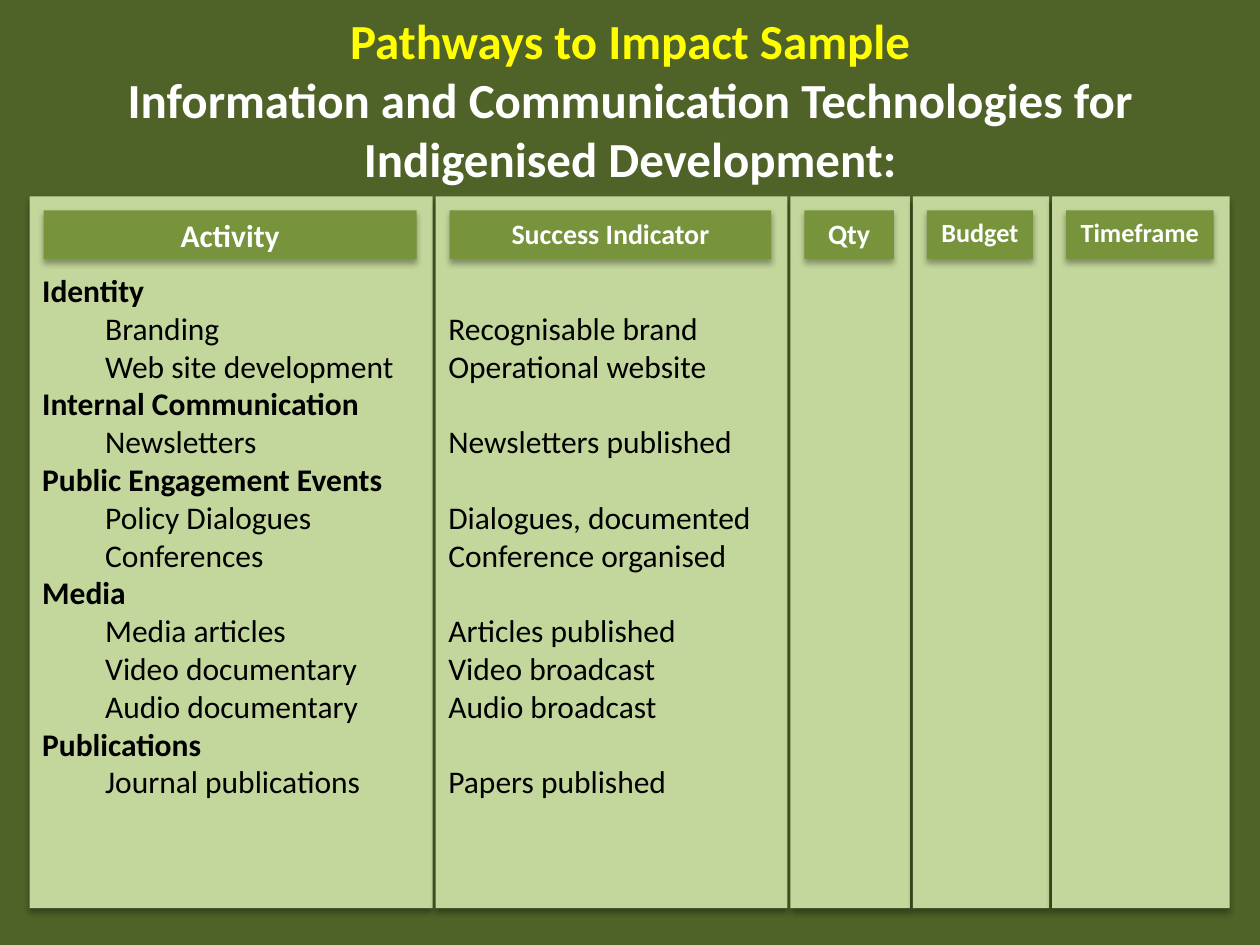
"""Build a slide with a five-column plan of tasks and their signs of success."""
import dataclasses
import typing

import lxml.etree
import pptx
import pptx.dml.color
import pptx.enum.shapes
import pptx.enum.text
import pptx.oxml.ns
import pptx.util

Pt = pptx.util.Pt
qn = pptx.oxml.ns.qn
ALIGN = pptx.enum.text.PP_ALIGN
COLORS = {
    "back": "4F6228",
    "panel": "C3D69B",
    "head": "77933C",
    "gold": "FFFF00",
    "white": "FFFFFF",
    "black": "000000",
}
LEFT, TOP, HEIGHT, GAP = 16.9, 112.2, 406.8, 1.7
INSET, TRIM, ROW = 8, 17.2, 21.6
LIST_TOP = 42.6


@dataclasses.dataclass
class Column:
    head: str
    width: float
    size: float


@dataclasses.dataclass
class Topic:
    name: str
    tasks: list[tuple[str, str]]


COLUMNS = [
    Column("Activity", 230.4, 18),
    Column("Success Indicator", 200.9, 16),
    Column("Qty", 68.4, 16),
    Column("Budget", 77.8, 15),
    Column("Timeframe", 101.5, 15),
]
TOPICS = [
    Topic("Identity", [
        ("Branding", "Recognisable brand"),
        ("Web site development", "Operational website"),
    ]),
    Topic("Internal Communication", [("Newsletters", "Newsletters published")]),
    Topic("Public Engagement Events", [
        ("Policy Dialogues", "Dialogues, documented"),
        ("Conferences", "Conference organised"),
    ]),
    Topic("Media", [
        ("Media articles", "Articles published"),
        ("Video documentary", "Video broadcast"),
        ("Audio documentary", "Audio broadcast"),
    ]),
    Topic("Publications", [("Journal publications", "Papers published")]),
]


def color(name: str) -> pptx.dml.color.RGBColor:
    """Look up a named colour."""
    return pptx.dml.color.RGBColor.from_string(COLORS[name])


def write(para: typing.Any, text: str, *, size: float = 18, tint: str = "black",
          bold: bool = False, align: typing.Any = ALIGN.LEFT) -> None:
    """Add a run of text to a paragraph."""
    para.alignment = align
    run = para.add_run()
    run.text = text
    run.font.name = "Calibri"
    run.font.size = Pt(size)
    run.font.bold = bold
    run.font.color.rgb = color(tint)


def place(shape: typing.Any, left: float, top: float, width: float, height: float) -> None:
    """Move and size a shape."""
    shape.left, shape.top = Pt(left), Pt(top)
    shape.width, shape.height = Pt(width), Pt(height)


def dress(shape: typing.Any, tint: str) -> None:
    """Give a shape a plain fill, no line and a soft shadow."""
    shape.fill.solid()
    shape.fill.fore_color.rgb = color(tint)
    shape.line.fill.background()
    shape.shadow.inherit = False
    effects = shape._element.spPr.find(qn("a:effectLst"))
    shadow = lxml.etree.SubElement(
        effects, qn("a:outerShdw"), blurRad=str(Pt(3.5)), dist=str(Pt(2.2)),
        dir="5400000", algn="t", rotWithShape="0")
    tone = lxml.etree.SubElement(shadow, qn("a:srgbClr"), val=COLORS["black"])
    lxml.etree.SubElement(tone, qn("a:alpha"), val="32000")


def add_box(slide: typing.Any) -> typing.Any:
    """Add a rectangle to be placed later."""
    return slide.shapes.add_shape(pptx.enum.shapes.MSO_SHAPE.RECTANGLE, 0, 0, 0, 0)


def open_list(shape: typing.Any, top: float) -> typing.Any:
    """Ready a list frame whose text starts at the given inset."""
    frame = shape.text_frame
    frame.auto_size = pptx.enum.text.MSO_AUTO_SIZE.NONE
    frame.vertical_anchor = pptx.enum.text.MSO_ANCHOR.TOP
    frame.margin_top = Pt(top)
    return frame


def add_item(frame: typing.Any, text: str, *, indent: float = 0, before: float = 0,
             bold: bool = False) -> None:
    """Add one list line without a bullet."""
    first = frame.paragraphs[0]
    para = frame.add_paragraph() if first.runs else first
    props = para._p.get_or_add_pPr()
    props.set("marL", str(Pt(indent)))
    props.set("indent", "0")
    lxml.etree.SubElement(props, qn("a:buNone"))
    para.space_before = Pt(before)
    write(para, text, bold=bold)


def add_title(shape: typing.Any) -> None:
    """Fill the title in two colours."""
    place(shape, 36, 11.5, 648, 90)
    frame = shape.text_frame
    frame.auto_size = pptx.enum.text.MSO_AUTO_SIZE.NONE
    frame.vertical_anchor = pptx.enum.text.MSO_ANCHOR.MIDDLE
    para = frame.paragraphs[0]
    style = {"size": 28, "bold": True, "align": ALIGN.CENTER}
    write(para, "Pathways to Impact Sample", tint="gold", **style)
    para.add_line_break()
    write(para, "Information and Communication Technologies for Indigenised Development:",
          tint="white", **style)


def add_lists(tasks: typing.Any, signs: typing.Any) -> None:
    """Fill both lists so that each sign lines up with its task."""
    left = open_list(tasks, LIST_TOP)
    right = open_list(signs, LIST_TOP + ROW)
    for rank, topic in enumerate(TOPICS):
        add_item(left, topic.name, bold=True)
        for spot, (task, sign) in enumerate(topic.tasks):
            add_item(left, task, indent=36)
            add_item(right, sign, before=ROW if rank and not spot else 0)


def add_columns(slide: typing.Any, bodies: list[typing.Any]) -> None:
    """Lay the panels side by side with a heading on each."""
    left = LEFT
    panels = bodies + [add_box(slide) for _ in COLUMNS[len(bodies):]]
    for panel, column in zip(panels, COLUMNS):
        place(panel, left, TOP, column.width, HEIGHT)
        dress(panel, "panel")
        head = add_box(slide)
        place(head, left + INSET, TOP + INSET, column.width - TRIM, 28)
        dress(head, "head")
        head.text_frame.vertical_anchor = pptx.enum.text.MSO_ANCHOR.TOP
        write(head.text_frame.paragraphs[0], column.head, size=column.size,
              tint="white", bold=True, align=ALIGN.CENTER)
        left += column.width + GAP


def main() -> None:
    """Build and save the deck."""
    deck = pptx.Presentation()
    deck.slide_width, deck.slide_height = Pt(720), Pt(540)
    slide = deck.slides.add_slide(deck.slide_layouts[3])
    slide.background.fill.solid()
    slide.background.fill.fore_color.rgb = color("back")
    bodies = [slide.placeholders[1], slide.placeholders[2]]
    add_title(slide.shapes.title)
    add_columns(slide, bodies)
    add_lists(*bodies)
    deck.save("out.pptx")


if __name__ == "__main__":
    main()
